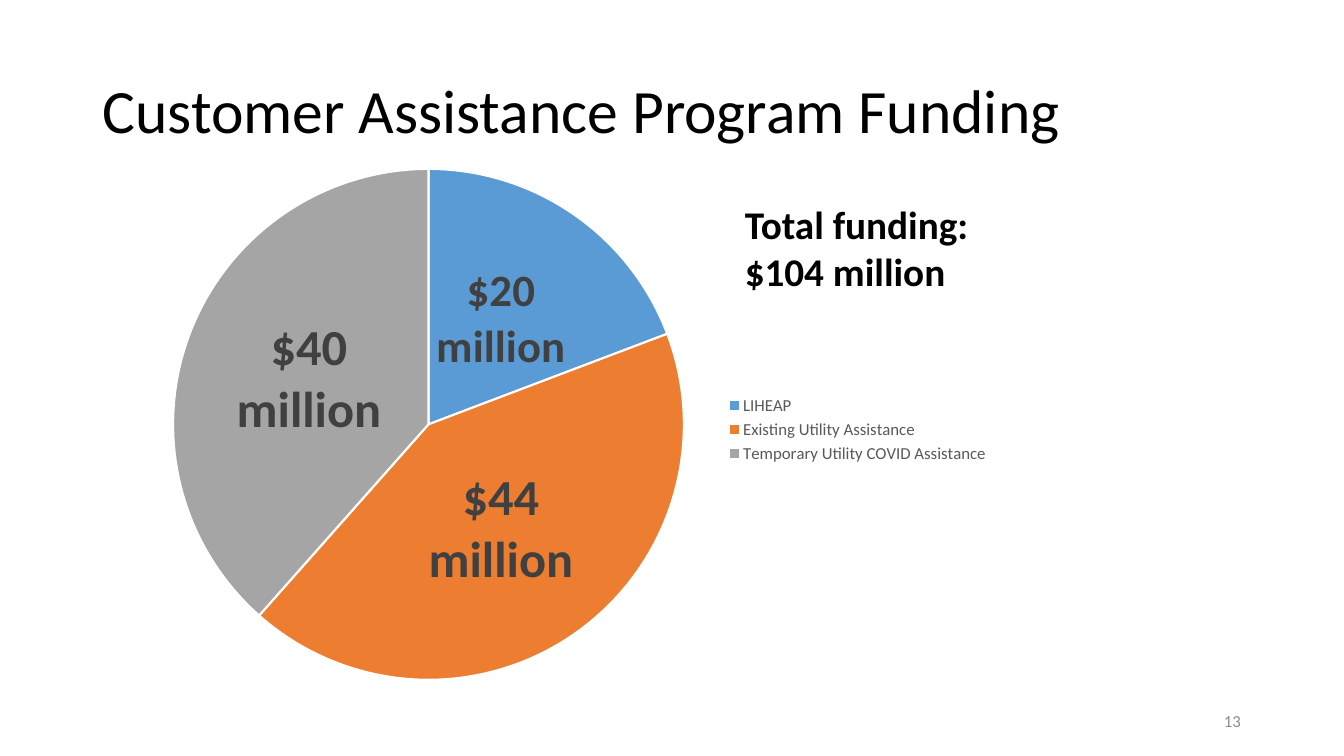
import pptx
import pptx.chart.data
import pptx.dml.color
import pptx.enum.chart
import pptx.enum.text
import pptx.oxml
import pptx.util

Cm = pptx.util.Cm
Pt = pptx.util.Pt
RGB = pptx.dml.color.RGBColor
ALIGN = pptx.enum.text.PP_ALIGN
ANCHOR = pptx.enum.text.MSO_ANCHOR
FIT = pptx.enum.text.MSO_AUTO_SIZE
KIND = pptx.enum.chart

BLACK = RGB(0x00, 0x00, 0x00)
WHITE = RGB(0xFF, 0xFF, 0xFF)
DARK = RGB(0x40, 0x40, 0x40)
SLATE = RGB(0x59, 0x59, 0x59)
PALE = RGB(0x8C, 0x8C, 0x8C)
BLUE = RGB(0x5B, 0x9B, 0xD5)
ORANGE = RGB(0xED, 0x7D, 0x31)
GRAY = RGB(0xA5, 0xA5, 0xA5)

FACE = "Calibri"
FUNDS = [
    ("LIHEAP", 20, BLUE, 32),
    ("Existing Utility Assistance", 44, ORANGE, 36),
    ("Temporary Utility COVID Assistance", 40, GRAY, 36),
]
LAYOUT = (
    '<c:layout {}><c:manualLayout><c:layoutTarget val="inner"/>'
    '<c:xMode val="edge"/><c:yMode val="edge"/>'
    '<c:x val="0.045"/><c:y val="0.044"/><c:w val="0.59"/><c:h val="0.894"/>'
    "</c:manualLayout></c:layout>"
).format(pptx.oxml.ns.nsdecls("c"))


def style(font, size, color, bold=False):
    font.name = FACE
    font.size = Pt(size)
    font.bold = bold
    font.color.rgb = color


def add_title(slide, box):
    title = slide.shapes.title
    title.left, title.top, title.width, title.height = box
    frame = title.text_frame
    frame.text = "Customer Assistance Program Funding"
    frame.auto_size = FIT.NONE
    frame.vertical_anchor = ANCHOR.MIDDLE
    line = frame.paragraphs[0]
    line.alignment = ALIGN.LEFT
    line.line_spacing = 0.9
    style(line.font, 44, BLACK)


def add_pie(slide, box):
    data = pptx.chart.data.CategoryChartData()
    data.categories = [fund[0] for fund in FUNDS]
    data.add_series("Series 1", [fund[1] for fund in FUNDS])
    chart = slide.shapes.add_chart(KIND.XL_CHART_TYPE.PIE, *box, data).chart
    style(chart.font, 10, BLACK)
    chart.has_title = False
    chart.has_legend = True
    chart.legend.position = KIND.XL_LEGEND_POSITION.RIGHT
    chart.legend.include_in_layout = False
    style(chart.legend.font, 12, SLATE)

    plot = chart.plots[0]
    plot.vary_by_categories = True
    area = chart.element.chart.plotArea
    for old in area.xpath("c:layout"):
        area.remove(old)
    area.insert(0, pptx.oxml.parse_xml(LAYOUT))

    series = plot.series[0]
    labels = series.data_labels
    labels.show_value = True
    labels.position = KIND.XL_LABEL_POSITION.CENTER
    style(labels.font, 12, DARK)
    for index, (name, value, color, size) in enumerate(FUNDS):
        point = series.points[index]
        point.format.fill.solid()
        point.format.fill.fore_color.rgb = color
        point.format.line.color.rgb = WHITE
        point.format.line.width = Pt(1.5)
        label = point.data_label
        frame = label.text_frame
        frame.word_wrap = True
        line = frame.paragraphs[0]
        run = line.add_run()
        run.text = f"${value} million"
        style(line.font, size, DARK, True)
        style(run.font, size, DARK, True)
        label.position = KIND.XL_LABEL_POSITION.CENTER


def add_total(slide, box):
    frame = slide.shapes.add_textbox(*box).text_frame
    frame.word_wrap = True
    frame.auto_size = FIT.SHAPE_TO_FIT_TEXT
    total = sum(fund[1] for fund in FUNDS)
    frame.text = f"Total funding:\n${total} million"
    for line in frame.paragraphs:
        style(line.font, 28, BLACK, True)


def add_number(slide, box):
    frame = slide.shapes.add_textbox(*box).text_frame
    frame.word_wrap = True
    frame.vertical_anchor = ANCHOR.MIDDLE
    frame.text = "13"
    line = frame.paragraphs[0]
    line.alignment = ALIGN.RIGHT
    style(line.font, 12, PALE)


def main():
    deck = pptx.Presentation()
    deck.slide_width = Cm(33.87)
    deck.slide_height = Cm(19.05)
    slide = deck.slides.add_slide(deck.slide_layouts[5])
    add_title(slide, (Cm(2.33), Cm(1.02), Cm(29.21), Cm(3.68)))
    add_number(slide, (Cm(30.38), Cm(17.65), Cm(1.14), Cm(1.02)))
    add_pie(slide, (Cm(3.38), Cm(3.61), Cm(21.82), Cm(14.43)))
    add_total(slide, (Cm(18.52), Cm(4.93), Cm(8.94), Cm(2.64)))
    deck.save("out.pptx")


if __name__ == "__main__":
    main()
